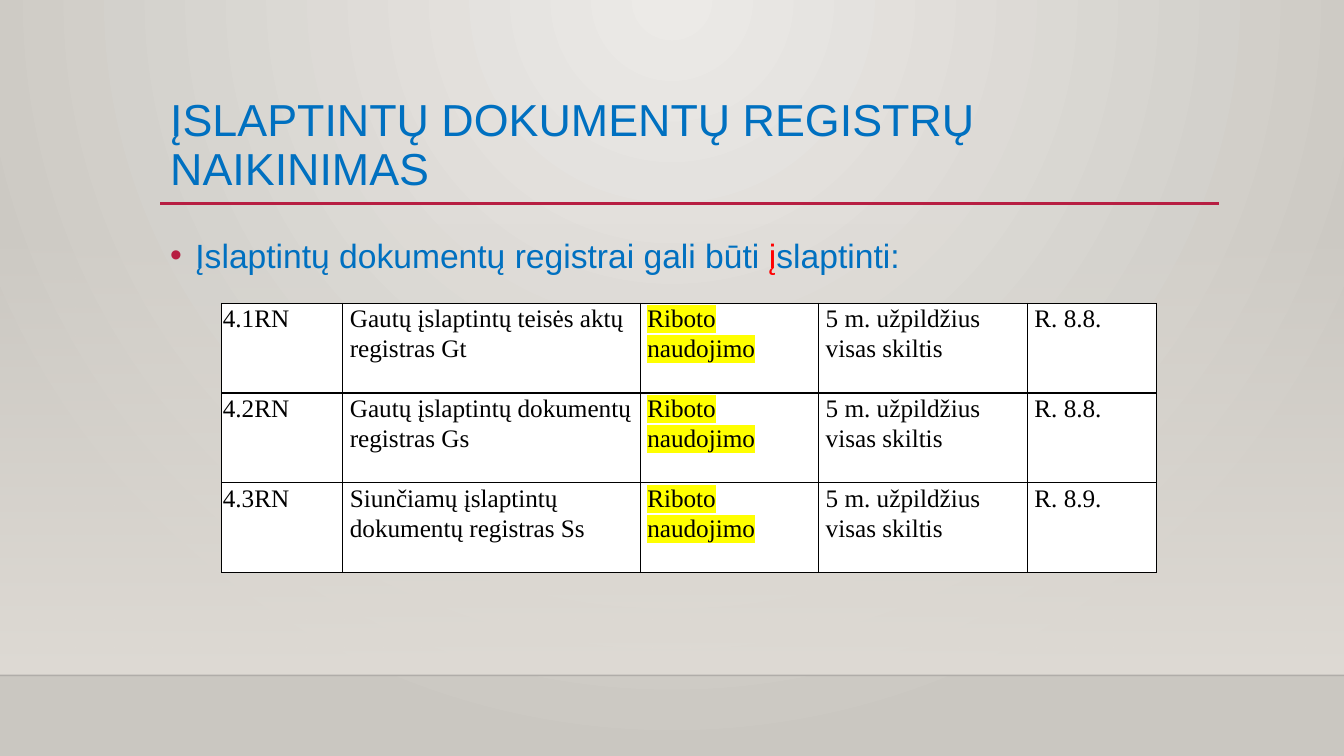
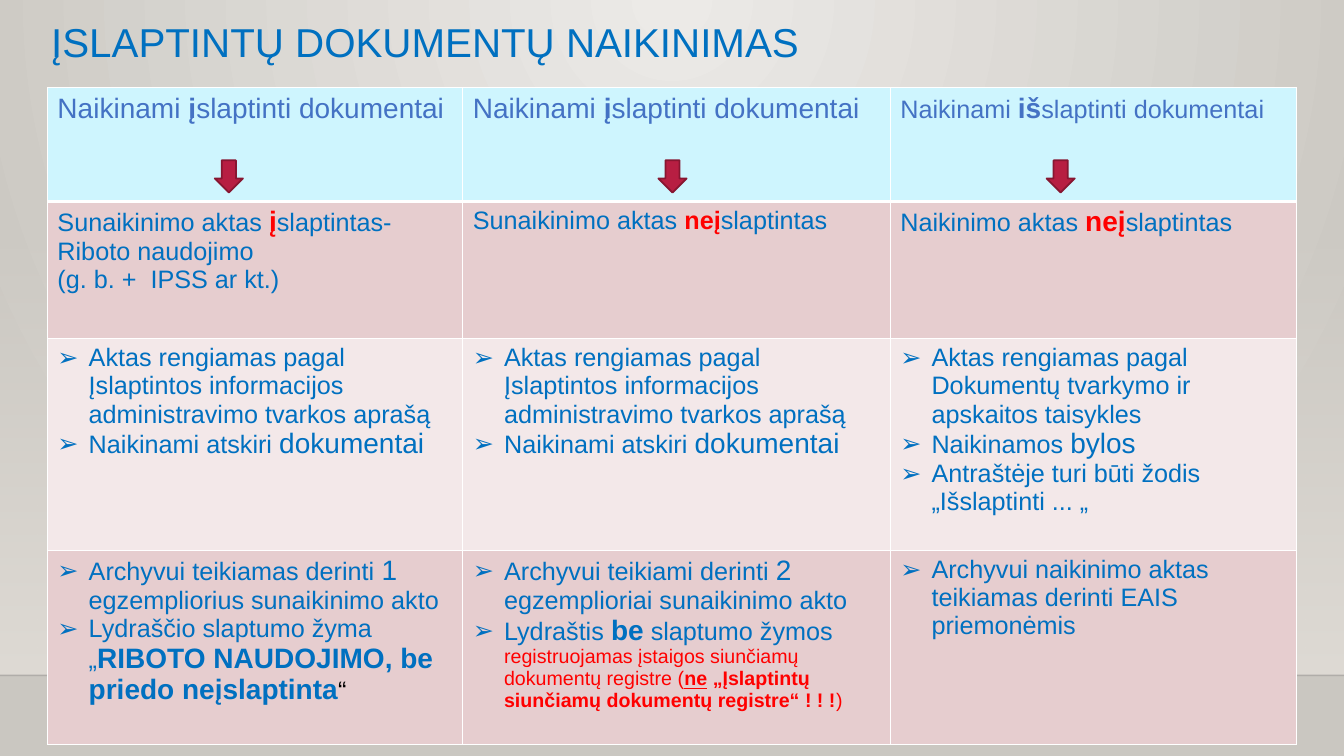
from itertools import product

from lxml.etree import SubElement
from pptx import Presentation
from pptx.dml.color import RGBColor
from pptx.enum.shapes import MSO_CONNECTOR, MSO_SHAPE
from pptx.enum.text import MSO_ANCHOR
from pptx.oxml import parse_xml
from pptx.oxml.ns import nsdecls, qn
from pptx.util import Inches, Pt

SLIDE_WIDTH, SLIDE_HEIGHT = 13.33, 7.5
BLUE, RED, BLACK, WHITE, YELLOW = "0070C0", "FF0000", "000000", "FFFFFF", "FFFF00"
HEADER_BLUE, CRIMSON, DARK_CRIMSON = "4472C4", "B71E42", "871631"
HEADER_FILL, ROSE, PALE_ROSE = "CEF5FE", "E6CDCF", "F3E8E9"
PAGE_LIGHT, PAGE_DARK, WALL = "ECEAE7", "CAC7C1", "DFDBD5"
SHELF_TOP = 6.7

BIG = {"size": 20}
BOLD = {"bold": True}
BIG_BOLD = {"size": 20, "bold": True}
RED_BOLD = {"color": RED, "bold": True}
BIG_RED_BOLD = {"size": 20, **RED_BOLD}
SMALL_RED = {"size": 14, "color": RED}
SMALL_RED_BOLD = {"size": 14, **RED_BOLD}

REGISTERS = [
    ("4.1RN", "Gautų įslaptintų teisės aktų registras Gt", "R. 8.8."),
    ("4.2RN", "Gautų įslaptintų dokumentų registras Gs", "R. 8.8."),
    ("4.3RN", "Siunčiamų įslaptintų dokumentų registras Ss", "R. 8.9."),
]
MARKING, RETENTION = "Riboto naudojimo", "5 m. užpildžius visas skiltis"

# A cell is a list of paragraphs, a paragraph a list of runs:
# plain strings, or (text, style) pairs.
CLASSIFIED_HEADING = [["Naikinami ", ("į", BOLD), "slaptinti dokumentai"]]
CLASSIFIED_RULES = [
    ["Aktas rengiamas pagal Įslaptintos informacijos administravimo tvarkos aprašą"],
    ["Naikinami atskiri ", ("dokumentai", BIG)],
]
# Fill, height, default run style, bulleted, cells
DESTRUCTION_ROWS = [
    (HEADER_FILL, 1.13, {"size": 20, "color": HEADER_BLUE}, False, [
        CLASSIFIED_HEADING,
        CLASSIFIED_HEADING,
        [[("Naikinami ", {"size": 18}), ("iš", BOLD),
          ("slaptinti dokumentai", {"size": 18})]],
    ]),
    (ROSE, 1.36, {}, False, [
        [["Sunaikinimo aktas ", ("į", BIG_RED_BOLD), "slaptintas-"],
         ["Riboto naudojimo"],
         ["(g. b. +  IPSS ar kt.)"]],
        [["Sunaikinimo aktas ", ("neį", RED_BOLD), "slaptintas"]],
        [["Naikinimo aktas ", ("neį", BIG_RED_BOLD), "slaptintas"]],
    ]),
    (PALE_ROSE, 2.1, {}, True, [
        CLASSIFIED_RULES,
        CLASSIFIED_RULES,
        [["Aktas rengiamas pagal Dokumentų tvarkymo ir apskaitos taisykles"],
         ["Naikinamos ", ("bylos", BIG)],
         ["Antraštėje turi būti žodis „Išslaptinti ... „"]],
    ]),
    (ROSE, 1.93, {}, True, [
        [["Archyvui teikiamas derinti ", ("1 ", BIG), "egzempliorius sunaikinimo akto"],
         ["Lydraščio slaptumo žyma „",
          ("RIBOTO NAUDOJIMO, be priedo neįslaptinta", BIG_BOLD),
          ("“", {"color": BLACK})]],
        [["Archyvui teikiami derinti ", ("2 ", BIG), "egzemplioriai sunaikinimo akto"],
         ["Lydraštis ", ("be", BIG_BOLD), " slaptumo žymos"],
         [("registruojamas įstaigos siunčiamų dokumentų registre (", SMALL_RED),
          ("ne", {**SMALL_RED_BOLD, "underline": True}),
          (" „Įslaptintų siunčiamų dokumentų registre“ ! ! !", SMALL_RED_BOLD),
          (")", SMALL_RED)]],
        [["Archyvui naikinimo aktas teikiamas derinti EAIS priemonėmis"]],
    ]),
]


def rgb(hex_color):
    return RGBColor.from_string(hex_color)


def add_run(paragraph, text, size=18, color=BLUE, font="Arial",
            bold=False, underline=False, highlight=None):
    run = paragraph.add_run()
    run.text = text
    run.font.size = Pt(size)
    run.font.bold = bold
    run.font.underline = underline
    run.font.color.rgb = rgb(color)
    if highlight:
        mark = SubElement(run.font._element, qn("a:highlight"))
        SubElement(mark, qn("a:srgbClr"), val=highlight)
    run.font.name = font


def add_runs(paragraph, runs, **defaults):
    for run in runs:
        text, style = (run, {}) if isinstance(run, str) else run
        add_run(paragraph, text, **{**defaults, **style})


def set_indent(paragraph, indent, bullet=None, bullet_color=None):
    """Indent a paragraph, hanging a bullet in the indent if one is given."""
    properties = paragraph._p.get_or_add_pPr()
    properties.set("marL", str(Inches(indent)))
    properties.set("indent", str(-Inches(indent) if bullet else 0))
    if not bullet:
        return
    if bullet_color:
        color = SubElement(properties, qn("a:buClr"))
        SubElement(color, qn("a:srgbClr"), val=bullet_color)
    SubElement(properties, qn("a:buFont"), typeface="Arial")
    SubElement(properties, qn("a:buChar"), char=bullet)


def set_alpha(element, percent):
    color = element.find(".//" + qn("a:srgbClr"))
    SubElement(color, qn("a:alpha"), val=str(percent * 1000))


def set_gradient(fill, start, end):
    fill.gradient()
    for stop, color, position in zip(fill.gradient_stops, (start, end), (0, 1)):
        stop.color.rgb = rgb(color)
        stop.position = position


def add_line(slide, left, right, top, color, width):
    line = slide.shapes.add_connector(
        MSO_CONNECTOR.STRAIGHT, Inches(left), Inches(top), Inches(right), Inches(top))
    line.line.color.rgb = rgb(color)
    line.line.width = Pt(width)
    SubElement(line._element.spPr, qn("a:effectLst"))
    return line


def add_textbox(slide, left, top, width, height, anchor=MSO_ANCHOR.TOP):
    """Add a wrapping text box and return its first paragraph."""
    frame = slide.shapes.add_textbox(
        Inches(left), Inches(top), Inches(width), Inches(height)).text_frame
    frame.word_wrap = True
    frame.vertical_anchor = anchor
    return frame.paragraphs[0]


def add_title(slide, text, left, top, width, height, size):
    paragraph = add_textbox(slide, left, top, width, height, MSO_ANCHOR.MIDDLE)
    paragraph.line_spacing = 0.9
    add_run(paragraph, text, size=size)


def add_backdrop_slide(presentation):
    """Add a blank slide with the spotlit wall and the shelf edge."""
    slide = presentation.slides.add_slide(presentation.slide_layouts[6])
    set_gradient(slide.background.fill, PAGE_LIGHT, PAGE_DARK)
    gradient = slide.element.find(".//" + qn("a:gradFill"))
    gradient.replace(gradient.find(qn("a:lin")), parse_xml(
        f'<a:path {nsdecls("a")} path="circle">'
        '<a:fillToRect l="43000" t="0" r="43000" b="100000"/></a:path>'))

    wall_top = 2.21
    wall = slide.shapes.add_shape(
        MSO_SHAPE.RECTANGLE, 0, Inches(wall_top),
        Inches(SLIDE_WIDTH), Inches(SHELF_TOP - wall_top))
    wall.shadow.inherit = False
    wall.line.fill.background()
    set_gradient(wall.fill, WALL, WALL)
    wall.fill.gradient_angle = 270
    set_alpha(wall._element.spPr, 0)

    shelf_edge = add_line(slide, 0, SLIDE_WIDTH, SHELF_TOP, "000001", 1)
    set_alpha(shelf_edge._element.spPr, 20)
    return slide


def set_borders(cell, color, top=1, bottom=1):
    properties = cell._tc.get_or_add_tcPr()
    sides = (("lnL", 1), ("lnR", 1), ("lnT", top), ("lnB", bottom))
    for index, (side, width) in enumerate(sides):
        properties.insert(index, parse_xml(
            f'<a:{side} {nsdecls("a")} w="{Pt(width)}"><a:solidFill>'
            f'<a:srgbClr val="{color}"/></a:solidFill></a:{side}>'))


def add_plain_table(slide, left, top, widths, heights):
    table = slide.shapes.add_table(
        len(heights), len(widths), Inches(left), Inches(top),
        Inches(sum(widths)), Inches(sum(heights))).table
    table.first_row = table.horz_banding = False
    for column, width in zip(table.columns, widths):
        column.width = Inches(width)
    for row, height in zip(table.rows, heights):
        row.height = Inches(height)
    return table


def fill_cell(cell, color):
    cell.fill.solid()
    cell.fill.fore_color.rgb = rgb(color)


def add_register_table(slide, left, top):
    table = add_plain_table(slide, left, top, [1.2, 2.95, 1.77, 2.07, 1.28],
                            [0.89] * len(REGISTERS))
    for row, (number, name, clause) in enumerate(REGISTERS):
        for column, text in enumerate((number, name, MARKING, RETENTION, clause)):
            cell = table.cell(row, column)
            fill_cell(cell, WHITE)
            set_borders(cell, BLACK)
            cell.margin_left = cell.margin_right = Inches(0.07 if column else 0.01)
            cell.margin_top = cell.margin_bottom = 0
            paragraph = cell.text_frame.paragraphs[0]
            paragraph.line_spacing = 1.07
            add_run(paragraph, text, color=BLACK, font="Times New Roman",
                    highlight=YELLOW if text == MARKING else None)


def add_destruction_table(slide, left, top):
    heights = [row[1] for row in DESTRUCTION_ROWS]
    table = add_plain_table(slide, left, top, [4.12, 4.24, 4.03], heights)
    for row, column in product(range(len(heights)), range(3)):
        color, _, style, bulleted, cells = DESTRUCTION_ROWS[row]
        cell = table.cell(row, column)
        fill_cell(cell, color)
        set_borders(cell, WHITE, top=3 if row == 1 else 1, bottom=3 if row == 0 else 1)
        frame = cell.text_frame
        for index, runs in enumerate(cells[column]):
            paragraph = frame.add_paragraph() if index else frame.paragraphs[0]
            if bulleted:
                continues = runs[0] == (runs[0][0], SMALL_RED)
                set_indent(paragraph, 0.31, None if continues else "➢")
            add_runs(paragraph, runs, **style)

    for offset in (1.66, 6.06, 9.91):
        arrow = slide.shapes.add_shape(
            MSO_SHAPE.DOWN_ARROW, Inches(left + offset), Inches(top + 0.72),
            Inches(0.28), Inches(0.32))
        arrow.shadow.inherit = False
        arrow.fill.solid()
        arrow.fill.fore_color.rgb = rgb(CRIMSON)
        arrow.line.color.rgb = rgb(DARK_CRIMSON)
        arrow.line.width = Pt(1.25)


def add_registers_slide(presentation):
    slide = add_backdrop_slide(presentation)
    left, width = 1.59, 10.5
    add_line(slide, left, left + width, 2.02, CRIMSON, 2.5)
    add_title(slide, "ĮSLAPTINTŲ DOKUMENTŲ REGISTRŲ NAIKINIMAS", left, 0.88, width, 1.15, 32)
    paragraph = add_textbox(slide, left, 2.2, width, 0.7)
    paragraph.line_spacing = 1.2
    set_indent(paragraph, 0.25, "•", CRIMSON)
    add_runs(paragraph, ["Įslaptintų dokumentų registrai gali būti ",
                         ("į", {"color": RED}), "slaptinti:"], size=24)
    add_register_table(slide, 2.2, 3.01)


def add_destruction_slide(presentation):
    slide = add_backdrop_slide(presentation)
    add_title(slide, "ĮSLAPTINTŲ DOKUMENTŲ NAIKINIMAS", 0.41, 0.19, 12, 0.51, 28.8)
    add_destruction_table(slide, 0.47, 0.87)


def main():
    presentation = Presentation()
    presentation.slide_width = Inches(SLIDE_WIDTH)
    presentation.slide_height = Inches(SLIDE_HEIGHT)
    add_registers_slide(presentation)
    add_destruction_slide(presentation)
    presentation.save("out.pptx")


if __name__ == "__main__":
    main()
